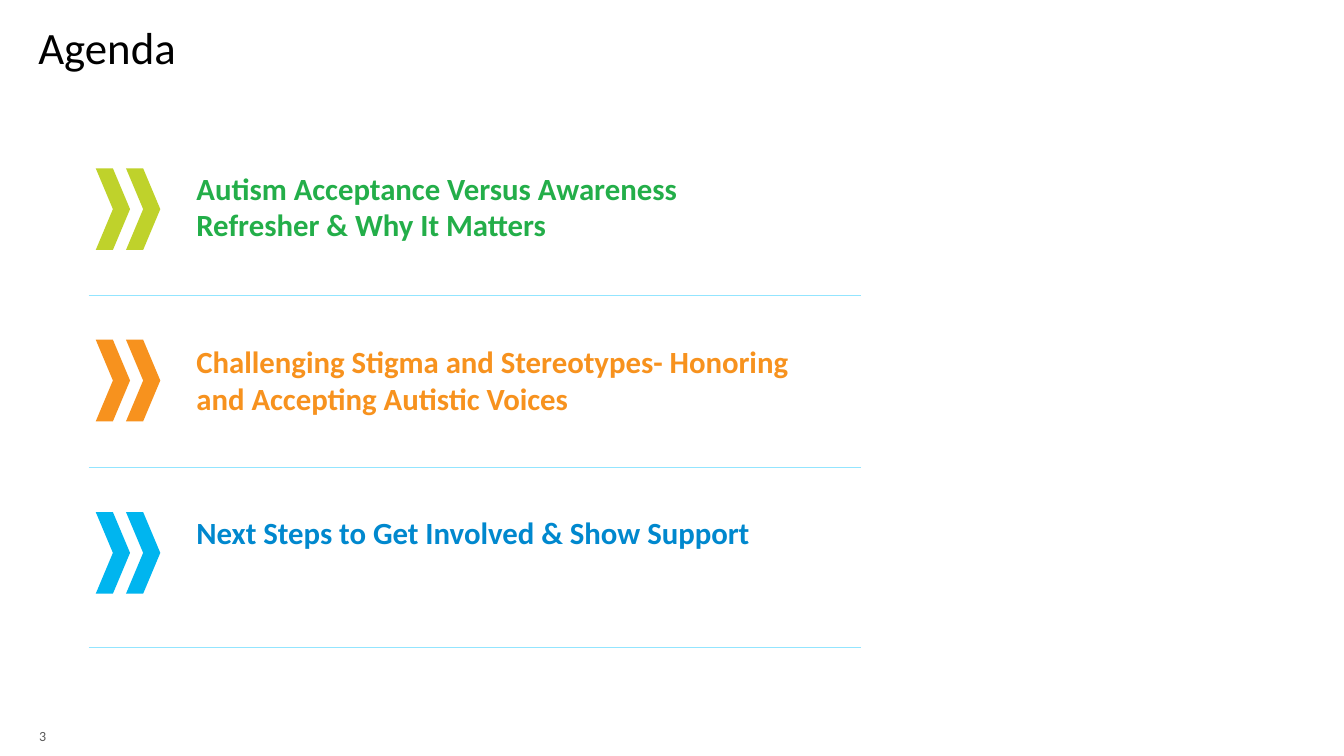
from lxml import etree
from pptx import Presentation
from pptx.dml.color import RGBColor
from pptx.enum.shapes import MSO_CONNECTOR, MSO_SHAPE
from pptx.enum.text import MSO_ANCHOR, PP_ALIGN
from pptx.oxml.ns import qn
from pptx.util import Inches, Pt

CHEVRON = MSO_SHAPE.CHEVRON
STRAIGHT = MSO_CONNECTOR.STRAIGHT
TOP, BOTTOM = MSO_ANCHOR.TOP, MSO_ANCHOR.BOTTOM
LEFT = PP_ALIGN.LEFT
TITLE_ONLY = 5

# Each topic: text, text colour, chevron colour, text top, chevron top, rule height
TOPICS = [
    ("Autism Acceptance Versus Awareness Refresher & Why It Matters",
     "23AE49", "BFD22B", 1.63, 1.67, 2.93),
    ("Challenging Stigma and Stereotypes- Honoring and Accepting Autistic Voices",
     "F7921E", "F7921E", 3.35, 3.37, 4.64),
    ("Next Steps to Get Involved & Show Support",
     "0088CE", "00B5EF", 5.05, 5.08, 6.42),
]


def color(hex_string):
    return RGBColor.from_string(hex_string)


class AgendaSlide:
    font_name = "Calibri"
    rule_color = "93E5FF"

    def __init__(self, presentation):
        layout = presentation.slide_layouts[TITLE_ONLY]
        self.slide = presentation.slides.add_slide(layout)
        self.shapes = self.slide.shapes

    def fill_text(self, shape, text, size, hex_color, bold=False, anchor=TOP):
        frame = shape.text_frame
        frame.word_wrap = True
        frame.vertical_anchor = anchor
        paragraph = frame.paragraphs[0]
        paragraph.alignment = LEFT
        run = paragraph.add_run()
        run.text = text
        run.font.name = self.font_name
        run.font.size = Pt(size)
        run.font.bold = bold
        run.font.color.rgb = color(hex_color)
        return paragraph

    def title(self, text, left, top, width, height):
        shape = self.shapes.title
        shape.left, shape.top = Inches(left), Inches(top)
        shape.width, shape.height = Inches(width), Inches(height)
        paragraph = self.fill_text(shape, text, 32, "000000")
        paragraph.line_spacing = 0.9

    def text(self, text, left, top, width, height, size, hex_color, **style):
        shape = self.shapes.add_textbox(
            Inches(left), Inches(top), Inches(width), Inches(height))
        self.fill_text(shape, text, size, hex_color, **style)

    def double_chevron(self, left, top, hex_color):
        group = self.shapes.add_group_shape()
        for offset in (0, 0.3):
            shape = group.shapes.add_shape(
                CHEVRON, Inches(left + offset), Inches(top),
                Inches(0.34), Inches(0.81))
            shape.shadow.inherit = False
            shape.fill.solid()
            shape.fill.fore_color.rgb = color(hex_color)
            shape.line.fill.background()

    def rule(self, left, right, top):
        line = self.shapes.add_connector(
            STRAIGHT, Inches(left), Inches(top), Inches(right), Inches(top))
        line.line.color.rgb = color(self.rule_color)
        line.line.width = Pt(0.5)
        etree.SubElement(line._element.spPr, qn("a:effectLst"))


def main():
    presentation = Presentation()
    presentation.slide_width = Inches(13.33)
    presentation.slide_height = Inches(7.5)
    agenda = AgendaSlide(presentation)

    # Heading
    agenda.title("Agenda", 0.28, 0.21, 11.03, 1.24)

    # Topics with their markers and rules
    for text, text_color, marker_color, text_top, marker_top, rule_top in TOPICS:
        agenda.text(text, 1.85, text_top, 6.2, 0.84, 22, text_color, bold=True)
        agenda.double_chevron(0.95, marker_top, marker_color)
        agenda.rule(0.88, 8.54, rule_top)

    # Slide number
    agenda.text("3", 0.29, 7.03, 0.59, 0.4, 10, "595959", anchor=BOTTOM)

    presentation.save("out.pptx")


if __name__ == "__main__":
    main()
